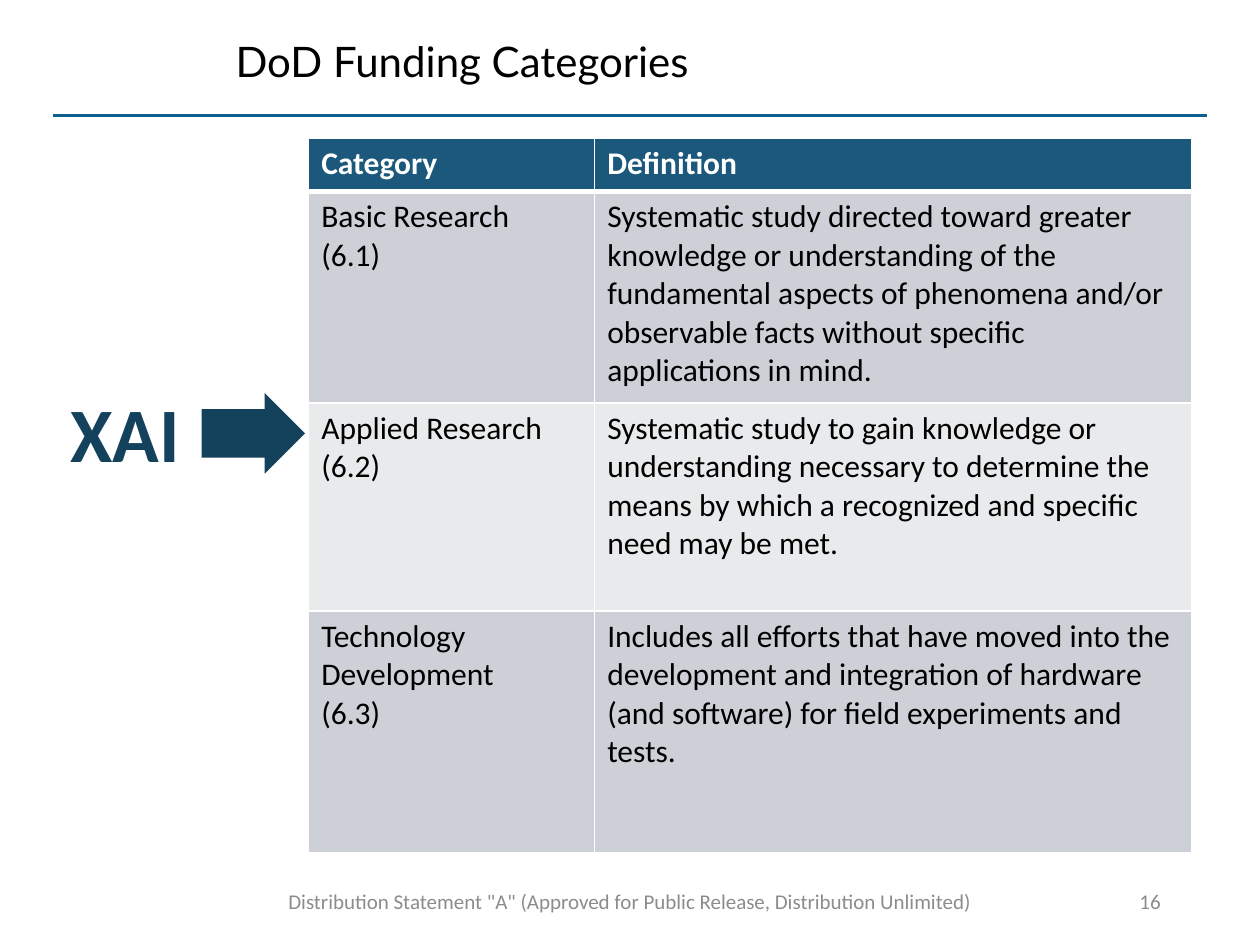
"""Build the slide on DoD funding categories."""
from dataclasses import dataclass

from lxml.etree import SubElement
from pptx import Presentation
from pptx.dml.color import RGBColor
from pptx.enum.shapes import MSO_CONNECTOR, MSO_SHAPE
from pptx.enum.text import MSO_ANCHOR, MSO_AUTO_SIZE, PP_ALIGN
from pptx.oxml.ns import qn
from pptx.util import Inches, Pt

NAVY, BLUE, RULE, GRAY = "14425D", "1B587C", "0F5E90", "8C8C8C"
WHITE, BLACK, DARK, PALE = "FFFFFF", "000000", "CDD1D7", "E8EAEC"


@dataclass
class Label:
    text: str
    box: tuple
    size: int
    color: str
    align: PP_ALIGN
    bold: bool = False
    wrap: bool = True
    anchor: MSO_ANCHOR = MSO_ANCHOR.MIDDLE


@dataclass
class Row:
    high: float
    fill: str
    cells: tuple
    head: bool = False


LABELS = [
    Label("16", (7.06, 6.95, 2.25, 0.4), 12, GRAY, PP_ALIGN.RIGHT),
    Label("XAI", (0.46, 3.01, 1.08, 0.84), 44, NAVY, PP_ALIGN.LEFT,
          True, False, MSO_ANCHOR.TOP),
    Label('Distribution Statement "A" (Approved for Public Release, '
          'Distribution Unlimited)',
          (1.51, 6.95, 6.98, 0.4), 12, GRAY, PP_ALIGN.CENTER),
]
WIDTHS = (2.27, 4.74)
ROWS = [
    Row(0.42, BLUE, (["Category"], ["Definition"]), True),
    Row(1.68, DARK, (
        ["Basic Research", "(6.1)"],
        ["Systematic study directed toward greater knowledge or "
         "understanding of the fundamental aspects of phenomena and/or "
         "observable facts without specific applications in mind."])),
    Row(1.65, PALE, (
        ["Applied Research (6.2)"],
        ["Systematic study to gain knowledge or",
         "understanding necessary to determine the",
         "means by which a recognized and specific",
         "need may be met."])),
    Row(1.92, DARK, (
        ["Technology Development", "(6.3)"],
        ["Includes all efforts that have moved into the development and "
         "integration of hardware (and software) for field experiments "
         "and tests."])),
]


def paint(form, color: str) -> None:
    """Give a fill, line or font one solid colour."""
    if hasattr(form, "solid"):
        form.solid()
        form.fore_color.rgb = RGBColor.from_string(color)
    else:
        form.color.rgb = RGBColor.from_string(color)


def place(shape, box: tuple) -> None:
    """Move and size a shape in inches."""
    shape.left, shape.top, shape.width, shape.height = map(Inches, box)


def write(part, text: str, size: int, color: str,
          bold: bool = False, face: str = "Calibri") -> None:
    """Add one styled run to a paragraph."""
    run = part.add_run()
    run.text = text
    run.font.name, run.font.size, run.font.bold = face, Pt(size), bold
    paint(run.font, color)


def add_title(slide, text: str) -> None:
    """Fill and move the title placeholder."""
    title = slide.shapes.title
    place(title, (1.77, 0.17, 7.81, 0.67))
    frame = title.text_frame
    frame.auto_size = MSO_AUTO_SIZE.NONE
    frame.vertical_anchor = MSO_ANCHOR.MIDDLE
    part = frame.paragraphs[0]
    part.alignment, part.line_spacing = PP_ALIGN.LEFT, 0.9
    write(part, text, 24, BLACK, face="Lato")


def add_rule(slide) -> None:
    """Draw the line below the title."""
    rule = slide.shapes.add_connector(
        MSO_CONNECTOR.STRAIGHT, *map(Inches, (0.42, 0.92, 9.58, 0.92)))
    paint(rule.line, RULE)
    rule.line.width = Pt(1.75)
    SubElement(rule._element.spPr, qn("a:effectLst"))


def add_label(slide, label: Label) -> None:
    """Draw one text box."""
    box = slide.shapes.add_textbox(*map(Inches, label.box))
    frame = box.text_frame
    frame.word_wrap = label.wrap
    frame.vertical_anchor = label.anchor
    part = frame.paragraphs[0]
    part.alignment = label.align
    write(part, label.text, label.size, label.color, label.bold)


def add_edges(cell, head: bool) -> None:
    """Put white borders round a cell, thick below the header."""
    props = cell._tc.get_or_add_tcPr()
    for side in "LRTB":
        width = Pt(3 if head and side == "B" else 1)
        edge = SubElement(props, qn(f"a:ln{side}"), w=str(width))
        fill = SubElement(edge, qn("a:solidFill"))
        SubElement(fill, qn("a:srgbClr"), val=WHITE)


def fill_cell(cell, lines: list, row: Row) -> None:
    """Write and colour one table cell."""
    add_edges(cell, row.head)
    paint(cell.fill, row.fill)
    frame = cell.text_frame
    for i, line in enumerate(lines):
        part = frame.add_paragraph() if i else frame.paragraphs[0]
        write(part, line, 18, WHITE if row.head else BLACK, row.head)


def add_grid(slide) -> None:
    """Draw the table of categories."""
    box = (2.45, 1.1, sum(WIDTHS), sum(row.high for row in ROWS))
    grid = slide.shapes.add_table(
        len(ROWS), len(WIDTHS), *map(Inches, box)).table
    for col, width in zip(grid.columns, WIDTHS):
        col.width = Inches(width)
    for line, row in zip(grid.rows, ROWS):
        line.height = Inches(row.high)
        for cell, lines in zip(line.cells, row.cells):
            fill_cell(cell, lines, row)


def add_arrow(slide) -> None:
    """Draw the arrow that points at applied research."""
    arrow = slide.shapes.add_shape(
        MSO_SHAPE.RIGHT_ARROW, *map(Inches, (1.6, 3.12, 0.82, 0.64)))
    arrow.adjustments[0], arrow.adjustments[1] = 0.6, 0.5
    arrow.shadow.inherit = False
    paint(arrow.fill, NAVY)
    arrow.line.fill.background()


def main() -> None:
    """Build and save the deck."""
    deck = Presentation()
    deck.slide_width, deck.slide_height = Inches(10), Inches(7.5)
    slide = deck.slides.add_slide(deck.slide_layouts[5])
    add_rule(slide)
    add_title(slide, "DoD Funding Categories")
    add_grid(slide)
    add_arrow(slide)
    for label in LABELS:
        add_label(slide, label)
    deck.save("out.pptx")


if __name__ == "__main__":
    main()
